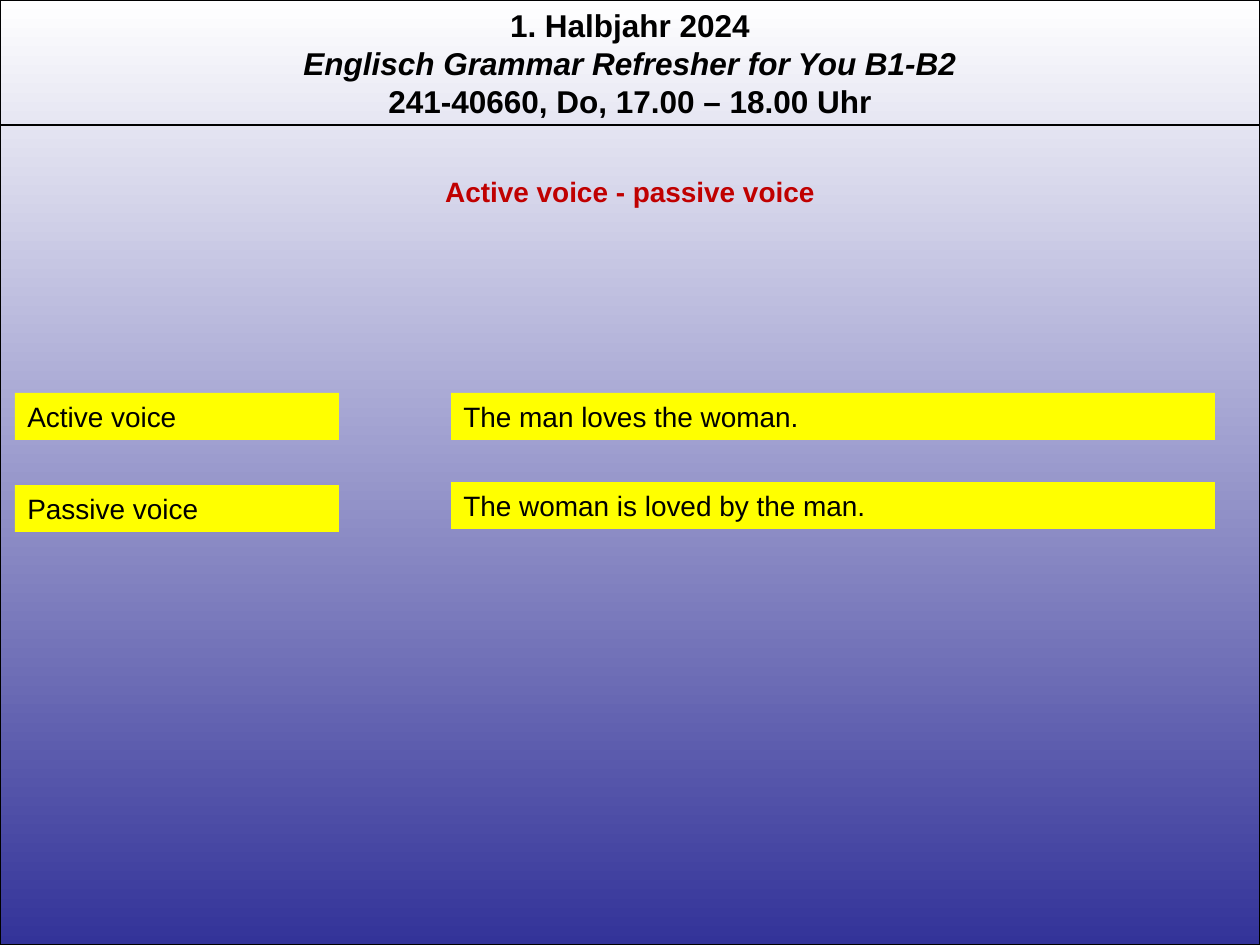
"""Build a grammar slide contrasting active and passive voice."""
from pptx import Presentation
from pptx.dml.color import RGBColor
from pptx.enum.shapes import MSO_CONNECTOR as Connector, MSO_SHAPE as Shape
from pptx.enum.text import MSO_ANCHOR as Anchor, MSO_AUTO_SIZE as AutoSize, PP_ALIGN as Align
from pptx.oxml.ns import qn
from pptx.util import Emu, Pt
from lxml.etree import SubElement

BLACK = RGBColor(0x00, 0x00, 0x00)
WHITE = RGBColor(0xFF, 0xFF, 0xFF)
INDIGO = RGBColor(0x33, 0x33, 0x99)
RED = RGBColor(0xC0, 0x00, 0x00)
YELLOW = RGBColor(0xFF, 0xFF, 0x00)

COURSE = [
    ("1. Halbjahr 2024", False),
    ("Englisch Grammar Refresher for You B1-B2", True),
    ("241-40660, Do, 17.00 – 18.00 Uhr", False),
]
TOPIC = "Active voice - passive voice"
EXAMPLES = [
    [("Active voice", 393), ("The man loves the woman.", 393)],
    [("Passive voice", 485), ("The woman is loved by the man.", 482)],
]
COLUMNS = [(15, 324), (451, 764)]

WIDTH, HEIGHT = 1260, 945
HEADER_HEIGHT, RULE_Y = 127, 125
TOPIC_Y, ROW_HEIGHT = 168, 47

COURSE_FONT = {"name": "Arial", "size": Pt(18), "bold": True}
TOPIC_FONT = {"name": "Arial", "size": Pt(16), "bold": True}
EXAMPLE_FONT = {"name": "Arial", "size": Pt(16), "bold": False}
FRAME = {"word_wrap": True, "auto_size": AutoSize.NONE, "vertical_anchor": Anchor.TOP}


def px(length):
    return Emu(round(length * 914400 / 126))


def box(*lengths):
    return [px(length) for length in lengths]


def apply(target, values):
    for key, value in values.items():
        setattr(target, key, value)


def write(shape, lines, font, color, align):
    frame = shape.text_frame
    frame.text = "\n".join(text for text, italic in lines)
    apply(frame, FRAME)
    for paragraph, (text, italic) in zip(frame.paragraphs, lines):
        paragraph.alignment = align
        for run in paragraph.runs:
            apply(run.font, {**font, "italic": italic})
            run.font.color.rgb = color


def outline(line):
    line.color.rgb = BLACK
    line.width = Pt(0.75)


def main():
    deck = Presentation()
    apply(deck, {"slide_width": px(WIDTH), "slide_height": px(HEIGHT)})
    slide = deck.slides.add_slide(deck.slide_layouts[5])
    shapes = slide.shapes

    backdrop = shapes.add_shape(Shape.RECTANGLE, *box(0, 0, WIDTH, HEIGHT))
    backdrop.shadow.inherit = False
    backdrop.fill.gradient()
    backdrop.fill.gradient_angle = 270
    for stop, color in zip(backdrop.fill.gradient_stops, (WHITE, INDIGO)):
        stop.color.rgb = color
    outline(backdrop.line)

    header = shapes.add_textbox(*box(0, 0, WIDTH, HEADER_HEIGHT))
    write(header, COURSE, COURSE_FONT, BLACK, Align.CENTER)

    rule = shapes.add_connector(Connector.STRAIGHT, *box(0, RULE_Y, WIDTH, RULE_Y))
    outline(rule.line)
    SubElement(rule.element.spPr, qn("a:effectLst"))

    topic = shapes.title
    rule.element.addnext(topic.element)
    apply(topic, dict(zip(("left", "top", "width", "height"),
                          box(0, TOPIC_Y, WIDTH, ROW_HEIGHT))))
    write(topic, [(TOPIC, False)], TOPIC_FONT, RED, Align.CENTER)

    for row in EXAMPLES:
        for (left, width), (text, top) in zip(COLUMNS, row):
            example = shapes.add_shape(Shape.RECTANGLE, *box(left, top, width, ROW_HEIGHT))
            example.shadow.inherit = False
            example.fill.solid()
            example.fill.fore_color.rgb = YELLOW
            example.line.fill.background()
            write(example, [(text, False)], EXAMPLE_FONT, BLACK, Align.LEFT)

    deck.save("out.pptx")


if __name__ == "__main__":
    main()
